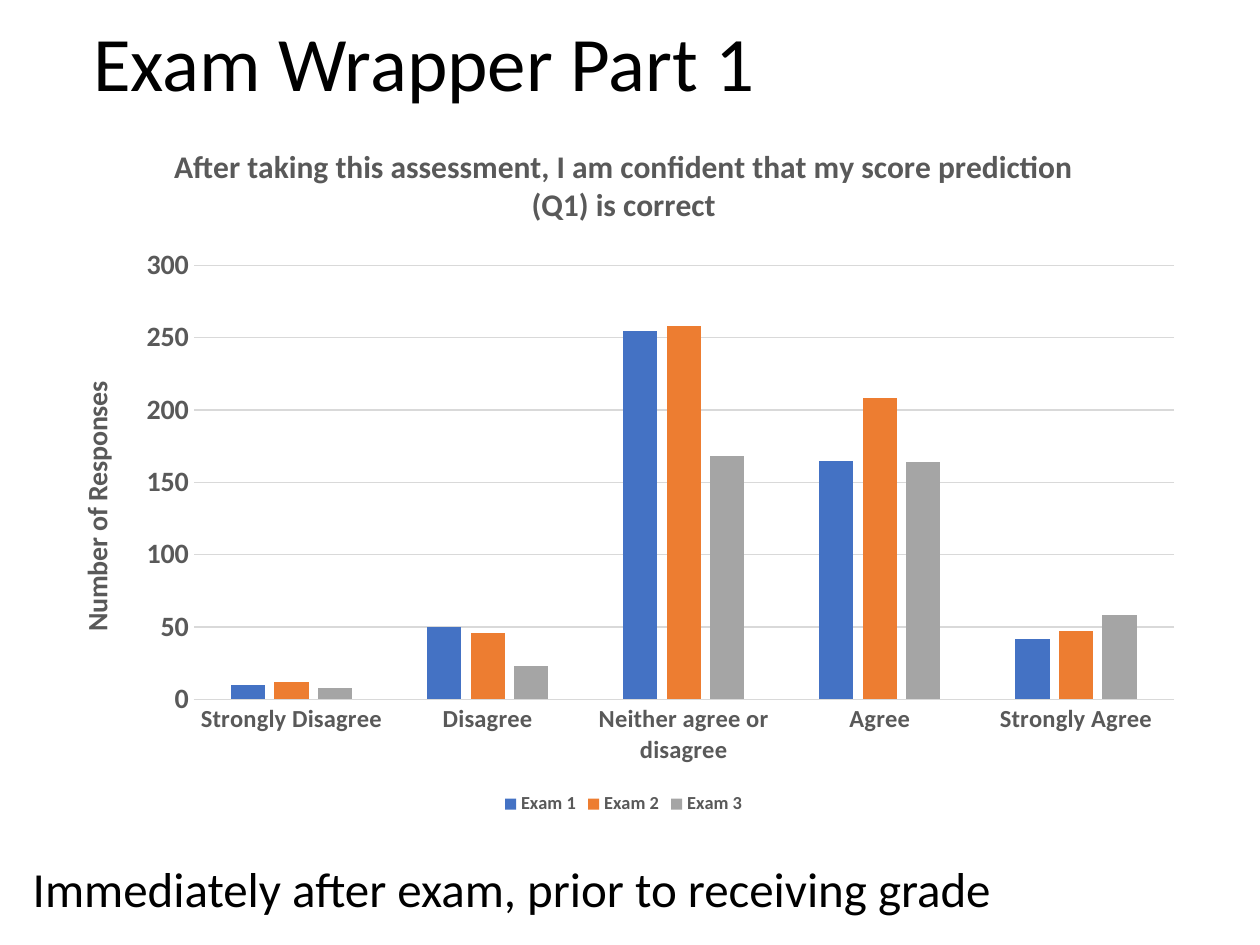
import pptx
import pptx.util
import pptx.chart.data
import pptx.dml.color
import pptx.enum.chart
import pptx.enum.text
import lxml.etree
from pptx.util import Inches

FONT = "Calibri"
GRAY = "595959"
RULE = "D9D9D9"


def color(value):
    return pptx.dml.color.RGBColor.from_string(value)


def set_text(tf, text, size, fill="000000", bold=False, spacing=None, before=None):
    tf.text = text
    p = tf.paragraphs[0]
    p.alignment = pptx.enum.text.PP_ALIGN.LEFT if spacing else None
    p.line_spacing = spacing
    p.space_before = None if before is None else pptx.util.Pt(before)
    font = p.runs[0].font
    font.name, font.size, font.bold = FONT, pptx.util.Pt(size), bold
    font.color.rgb = color(fill)
    return p


prs = pptx.Presentation()
prs.slide_width, prs.slide_height = Inches(10), Inches(7.5)
s = prs.slides.add_slide(prs.slide_layouts[1])
title, body = s.placeholders

# Title and caption
for sp, top, height, anchor in (
    (title, 0.13, 0.8, pptx.enum.text.MSO_ANCHOR.MIDDLE),
    (body, 6.85, 0.48, pptx.enum.text.MSO_ANCHOR.TOP),
):
    sp.left = Inches(0.64 if sp is title else 0.16)
    sp.top, sp.width, sp.height = Inches(top), Inches(8.62), Inches(height)
    sp.text_frame.auto_size = pptx.enum.text.MSO_AUTO_SIZE.NONE
    sp.text_frame.vertical_anchor = anchor
set_text(title.text_frame, "Exam Wrapper Part 1", 44, spacing=0.9)
p = set_text(body.text_frame, "Immediately after exam, prior to receiving grade", 28,
             spacing=0.8, before=10)
pPr = p._p.get_or_add_pPr()
pPr.set("marL", "0")
pPr.set("indent", "0")
lxml.etree.SubElement(pPr, pptx.oxml.ns.qn("a:buNone"))

# Chart data
data = pptx.chart.data.CategoryChartData()
data.categories = ["Strongly Disagree", "Disagree", "Neither agree or disagree",
                   "Agree", "Strongly Agree"]
exams = [
    ("Exam 1", (10, 50, 255, 165, 42), "4472C4"),
    ("Exam 2", (12, 46, 258, 208, 47), "ED7D31"),
    ("Exam 3", (8, 23, 168, 164, 58), "A5A5A5"),
]
for name, values, fill in exams:
    data.add_series(name, values)

# Clustered columns
chart = s.shapes.add_chart(pptx.enum.chart.XL_CHART_TYPE.COLUMN_CLUSTERED, Inches(0.4),
                           Inches(0.94), Inches(9.1), Inches(5.57), data).chart
chart.font.name, chart.font.size = FONT, pptx.util.Pt(10)
plot = chart.plots[0]
plot.gap_width, plot.overlap, plot.vary_by_categories = 219, -27, False
for series, (name, values, fill) in zip(plot.series, exams):
    series.format.fill.solid()
    series.format.fill.fore_color.rgb = color(fill)
    series.invert_if_negative = False

# Chart title and legend
chart.has_title = True
chart.chart_title.include_in_layout = False
set_text(chart.chart_title.text_frame,
         "After taking this assessment, I am confident that my score prediction (Q1) is correct",
         18, GRAY, True)
chart.has_legend = True
chart.legend.position = pptx.enum.chart.XL_LEGEND_POSITION.BOTTOM
chart.legend.include_in_layout = False

# Axes
cat, val = chart.category_axis, chart.value_axis
for axis in (cat, val):
    axis.major_tick_mark = axis.minor_tick_mark = pptx.enum.chart.XL_TICK_MARK.NONE
val.minimum_scale, val.maximum_scale, val.major_unit = 0, 300, 50
val.format.line.fill.background()
val.has_major_gridlines = True
for line in (cat.format.line, val.major_gridlines.format.line):
    line.color.rgb = color(RULE)
    line.width = pptx.util.Pt(0.75)
set_text(val.axis_title.text_frame, "Number of Responses", 16, GRAY, True)

# Label fonts
for font, size in ((cat.tick_labels.font, 14), (val.tick_labels.font, 16),
                   (chart.legend.font, 10.5)):
    font.name, font.size, font.bold = FONT, pptx.util.Pt(size), True
    font.color.rgb = color(GRAY)

prs.save("out.pptx")
